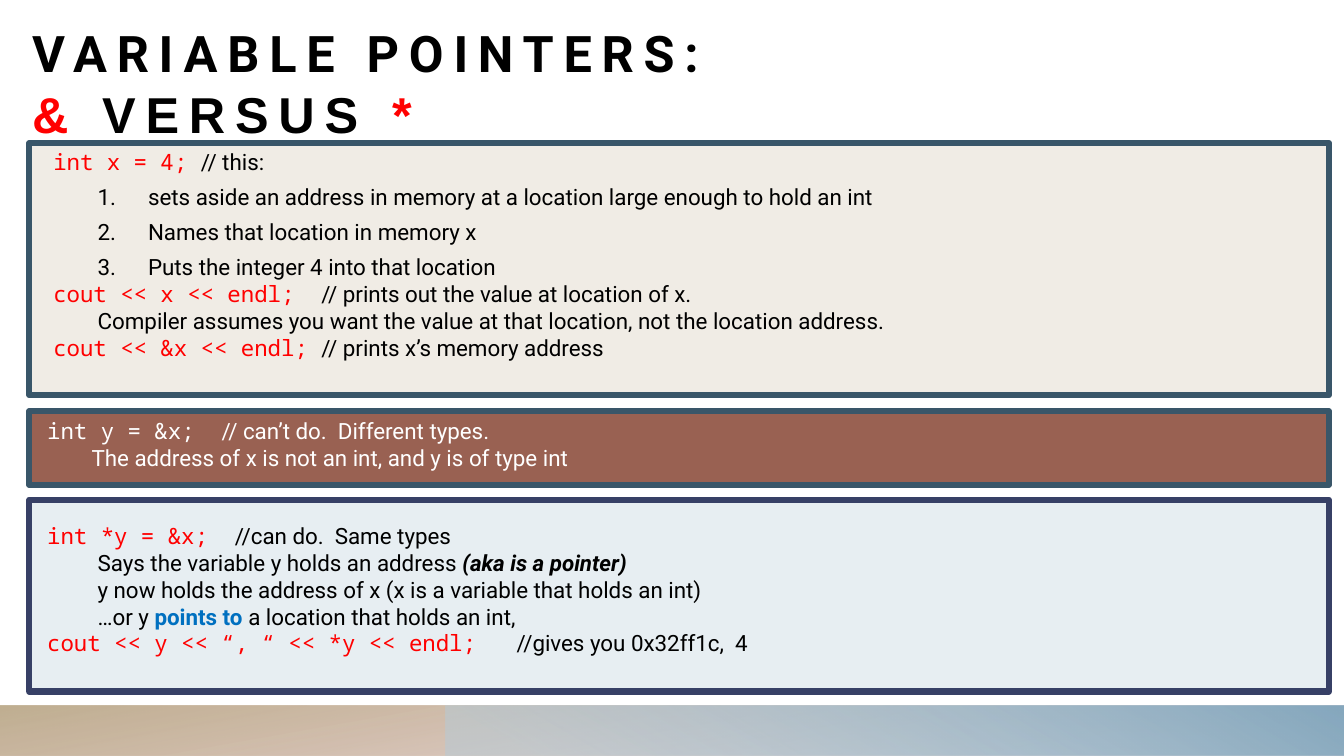
from lxml import etree
from pptx import Presentation
from pptx.dml.color import RGBColor
from pptx.enum.shapes import MSO_SHAPE
from pptx.enum.text import MSO_ANCHOR, MSO_AUTO_SIZE
from pptx.oxml import parse_xml
from pptx.oxml.ns import qn
from pptx.util import Inches, Pt

RECT = MSO_SHAPE.RECTANGLE
BOTTOM = MSO_ANCHOR.BOTTOM
GROW = MSO_AUTO_SIZE.SHAPE_TO_FIT_TEXT
NS = "http://schemas.openxmlformats.org/drawingml/2006/main"

BLACK = RGBColor(0, 0, 0)
WHITE = RGBColor(255, 255, 255)
RED = RGBColor(255, 0, 0)
BLUE = RGBColor(0x00, 0x70, 0xC0)
TEAL = RGBColor(0x39, 0x56, 0x69)
NAVY = RGBColor(0x37, 0x40, 0x66)
CREAM = RGBColor(0xF0, 0xEC, 0xE5)
BROWN = RGBColor(0x99, 0x61, 0x52)
ICE = RGBColor(0xE7, 0xEE, 0xF2)

# Run styles: font, colour, bold, italic
CODE = ("Noto Sans Mono", RED, False, False)
PALE = ("Noto Sans Mono", WHITE, False, False)
TEXT = ("Roboto", BLACK, False, False)
LIGHT = ("Roboto", WHITE, False, False)
STRONG = ("Roboto", BLACK, True, True)
POINT = ("Roboto", BLUE, True, False)
HEAD = ("Roboto", BLACK, True, False)
HEAD2 = ("Arial", BLACK, True, False)
MARK = ("Arial", RED, True, False)

TITLE = [
    [("VARIABLE POINTERS:", HEAD)],
    [("&", MARK), (" VERSUS ", HEAD2), ("*", MARK)],
]

# Footer bands: left, width, rotation, angle, stops (place, colour, opacity)
BANDS = [
    (0, 13.33, 180, 100, [(14, "BA8B7F", 28), (100, "B5A17E", 85)]),
    (4.42, 8.92, 0, 240, [(9, "B6CBD8", 55), (99, "86A8BE", 100)]),
]

# Panels: top, height, fill, edge, text box, lines (kind, runs)
PANELS = [
    (4.96, 1.9, ICE, NAVY, (0.37, 5.13, 12.47, 1.45), [
        ("flat", [("int *y = &x;  ", CODE), ("//can do.  Same types", TEXT)]),
        ("deep", [("Says the variable y holds an address ", TEXT),
                  ("(aka is a pointer)", STRONG)]),
        ("deep", [("y now holds the address of x "
                   "(x is a variable that holds an int)", TEXT)]),
        ("deep", [("…or y ", TEXT), ("points to ", POINT),
                  ("a location that holds an int,", TEXT)]),
        ("flat", [("cout << y << “, “ << *y << endl;   ", CODE),
                  ("//gives you 0x32ff1c,  4", TEXT)]),
    ]),
    (1.42, 2.5, CREAM, TEAL, (0.43, 1.42, 11.65, 2.23), [
        ("flat", [("int x = 4; ", CODE), ("// this:", TEXT)]),
        ("list", [("sets aside an address in memory at a location "
                   "large enough to hold an int", TEXT)]),
        ("list", [("Names that location in memory x", TEXT)]),
        ("list", [("Puts the integer 4 into that location", TEXT)]),
        ("flat", [("cout << x << endl;  ", CODE),
                  ("// prints out the value at location of x.", TEXT)]),
        ("in", [("Compiler assumes you want the value at that location, "
                 "not the location address.", TEXT)]),
        ("flat", [("cout << &x << endl; ", CODE),
                  ("// prints x’s memory address", TEXT)]),
    ]),
    (4.08, 0.73, BROWN, TEAL, (0.37, 4.09, 12.47, 0.64), [
        ("flat", [("int y = &x;  ", PALE),
                  ("// can’t do.  Different types.", LIGHT)]),
        ("in", [("The address of x is not an int, and y is of type int",
                 LIGHT)]),
    ]),
]

# Left margin and first-line indent of each kind of line
INDENTS = {"flat": (0, 0), "in": (0.44, 0), "deep": (0.5, 0),
           "list": (0.94, -0.5)}


def add_runs(para, runs, size):
    for words, (face, colour, bold, italic) in runs:
        run = para.add_run()
        run.text = words
        font = run.font
        font.name, font.size = face, Pt(size)
        font.bold, font.italic = bold, italic
        font.color.rgb = colour


def add_rect(slide, left, top, width, height):
    rect = slide.shapes.add_shape(
        RECT, Inches(left), Inches(top), Inches(width), Inches(height))
    rect.shadow.inherit = False
    return rect


def add_box(slide, place):
    box = slide.shapes.add_textbox(*[Inches(v) for v in place])
    box.text_frame.word_wrap = True
    return box.text_frame


def add_band(slide, left, width, turn, angle, stops):
    band = add_rect(slide, left, 7, width, 0.5)
    band.line.fill.background()
    band.rotation = turn
    props = band._element.spPr
    props.find(qn("a:xfrm")).set("flipH", "1")
    marks = "".join(
        f'<a:gs pos="{pos * 1000}"><a:srgbClr val="{colour}">'
        f'<a:alpha val="{alpha * 1000}"/></a:srgbClr></a:gs>'
        for pos, colour, alpha in stops)
    grad = parse_xml(
        f'<a:gradFill xmlns:a="{NS}" rotWithShape="1"><a:gsLst>{marks}'
        f'</a:gsLst><a:lin ang="{angle * 60000}" scaled="0"/></a:gradFill>')
    props.find(qn("a:prstGeom")).addnext(grad)


def add_title(slide):
    frame = add_box(slide, (0.32, 0.07, 11.2, 1.35))
    frame.vertical_anchor = BOTTOM
    frame.margin_left = frame.margin_right = 0
    frame.margin_top = frame.margin_bottom = 0
    para = frame.paragraphs[0]
    for i, runs in enumerate(TITLE):
        if i:
            para.add_line_break()
        add_runs(para, runs, 36)
    for run in para.runs:
        run.font._element.set("spc", "700")


def add_panel(slide, top, height, fill, edge, place, lines):
    rect = add_rect(slide, 0.29, top, 12.89, height)
    rect.fill.solid()
    rect.fill.fore_color.rgb = fill
    rect.line.color.rgb = edge
    rect.line.width = Pt(4.5)

    frame = add_box(slide, place)
    frame.auto_size = GROW
    for i, (kind, runs) in enumerate(lines):
        para = frame.add_paragraph() if i else frame.paragraphs[0]
        add_runs(para, runs, 16)
        left, first = INDENTS[kind]
        props = para._p.get_or_add_pPr()
        props.set("marL", str(Inches(left)))
        props.set("indent", str(Inches(first)))
        if kind == "list":
            para.level = 1
            para.line_spacing = 1.2
            para.space_before = Pt(2)
            etree.SubElement(props, qn("a:buFont"), typeface="+mj-lt")
            etree.SubElement(props, qn("a:buAutoNum"), type="arabicPeriod")


def main():
    deck = Presentation()
    deck.slide_width, deck.slide_height = Inches(13.33), Inches(7.5)
    slide = deck.slides.add_slide(deck.slide_layouts[6])
    for band in BANDS:
        add_band(slide, *band)
    add_title(slide)
    for panel in PANELS:
        add_panel(slide, *panel)
    deck.save("out.pptx")


if __name__ == "__main__":
    main()
